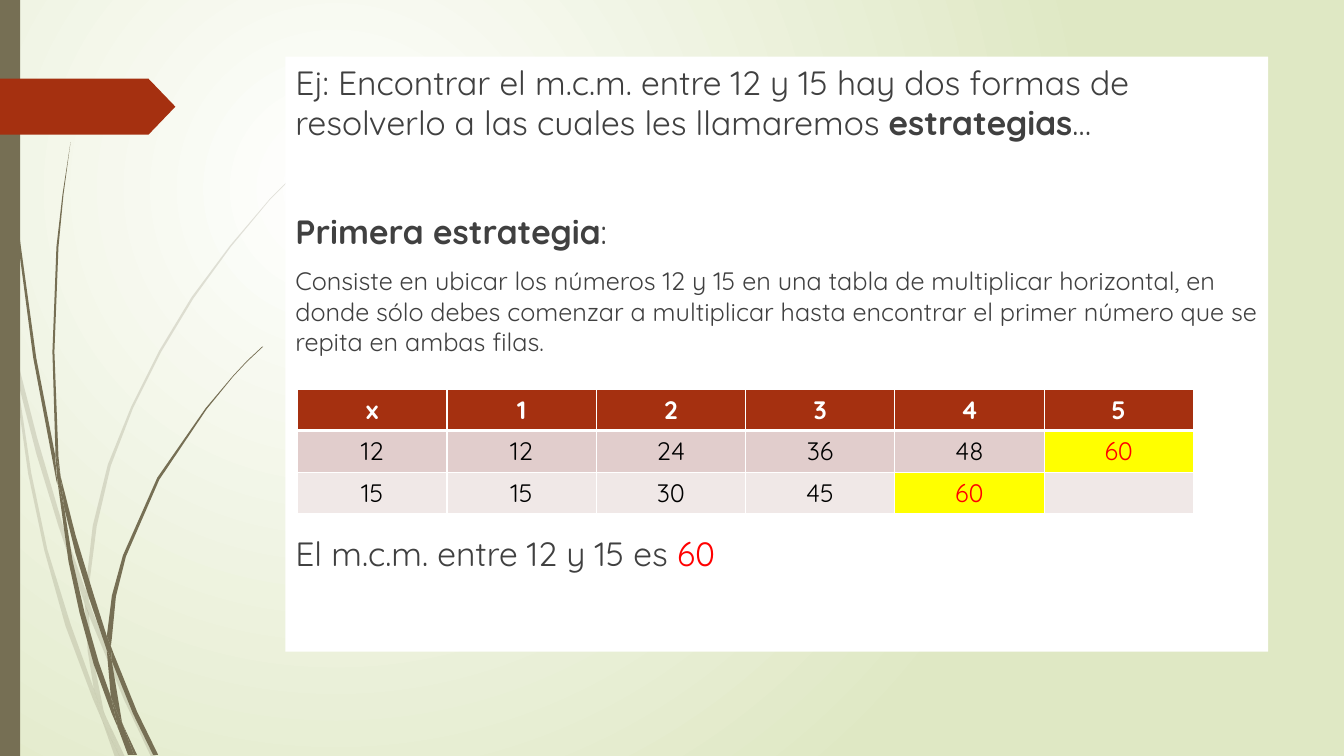
from dataclasses import dataclass

from lxml import etree
from pptx import Presentation
from pptx.dml.color import RGBColor
from pptx.enum import shapes, text
from pptx.oxml import ns
from pptx.util import Pt


@dataclass(frozen=True)
class Theme:
    font: str = "Quicksand"
    large: int = 24
    normal: int = 18
    white: str = "FFFFFF"
    black: str = "000000"
    body: str = "404040"
    olive: str = "766F54"
    rust: str = "A53010"
    meadow: str = "DFE8C4"
    answer: str = "FF0000"
    highlight: str = "FFFF00"
    bands: tuple = ("E1CDCC", "F0E8E7")


THEME = Theme()
WIDTH, HEIGHT = 960, 540

# Outlines of the grass segments, as (x, y) steps on a fine grid.
GRID = Pt(0.72)
FAINT_GRASS = [
    [(11, 350), (9, 322), (0, 282), (0, 299), (10, 344)],
    [(58, 522), (84, 599), (85, 586), (62, 520), (37, 435), (14, 345), (17, 376), (36, 450)],
    [(92, 607), (88, 596), (88, 610), (123, 694), (150, 751), (155, 751), (127, 692)],
    [(119, 751), (124, 751), (105, 711)],
    [(93, 683), (70, 619), (47, 545), (31, 469), (17, 376), (11, 350), (28, 470), (44, 546),
     (65, 621), (92, 693), (101, 714), (99, 707)],
    [(84, 599), (87, 646), (93, 683), (96, 692), (105, 711), (103, 706), (91, 646), (88, 608)],
    [(88, 584), (96, 522), (110, 462), (132, 405), (160, 349), (192, 296), (229, 245),
     (268, 198), (312, 154), (312, 153), (268, 197), (228, 244), (190, 295), (158, 348),
     (130, 404), (107, 461), (92, 522), (85, 584), (85, 586), (88, 596)],
    [(101, 714), (114, 751), (119, 751)],
    [(88, 610), (88, 596), (85, 586), (84, 599)],
    [(96, 692), (93, 683), (99, 707), (101, 714), (119, 751), (105, 711)],
]
DARK_GRASS = [
    [(7, 110), (17, 233), (33, 355), (56, 477), (57, 481), (55, 457), (55, 453), (36, 355),
     (19, 232), (8, 109), (5, 48), (4, 0), (3, 0), (4, 48)],
    [(88, 592), (106, 645), (106, 631), (93, 590), (75, 531), (60, 472), (64, 505), (75, 549)],
    [(113, 649), (110, 641), (111, 656), (132, 708), (152, 749), (157, 749), (136, 706)],
    [(110, 691), (98, 657), (84, 608), (72, 556), (64, 505), (57, 477), (68, 557), (79, 608),
     (93, 659), (111, 708), (117, 722), (116, 717)],
    [(60, 472), (58, 453), (54, 349), (58, 245), (63, 193), (70, 141), (62, 193), (56, 245),
     (52, 349), (55, 449)],
    [(133, 749), (136, 749), (122, 719)],
    [(57, 477), (64, 505), (60, 472), (55, 449), (55, 453)],
    [(111, 633), (115, 592), (125, 552), (158, 476), (205, 406), (231, 374), (245, 359),
     (261, 344), (260, 344), (245, 358), (231, 373), (204, 405), (156, 474), (122, 551),
     (111, 591), (106, 631), (110, 641)],
    [(117, 722), (127, 749), (131, 749)],
    [(106, 645), (110, 691), (116, 706), (122, 719), (121, 716), (111, 656), (109, 651)],
    [(106, 645), (109, 651), (111, 656), (110, 641), (106, 631)],
    [(116, 706), (110, 691), (116, 717), (117, 722), (130, 749), (133, 749), (122, 719)],
]


def color(value):
    return RGBColor.from_string(value)


def add_xml(parent, tag, **attributes):
    return etree.SubElement(parent, ns.qn(tag), attributes)


def paint(shape, fill):
    shape.shadow.inherit = False
    shape.fill.solid()
    shape.fill.fore_color.rgb = color(fill)
    shape.line.fill.background()


def style_run(run, size, ink, bold=False):
    run.font.name = THEME.font
    run.font.size = Pt(size)
    run.font.bold = bold
    run.font.color.rgb = color(ink)


def add_grass(slide, outlines, opacity):
    tuft = slide.shapes.add_group_shape()
    for outline in outlines:
        builder = tuft.shapes.build_freeform(*outline[0], scale=GRID)
        builder.add_line_segments(outline[1:], close=True)
        segment = builder.convert_to_shape()
        paint(segment, THEME.olive)
        if opacity < 100:
            tint = segment._element.spPr.find(ns.qn("a:solidFill"))[0]
            add_xml(tint, "a:alpha", val=str(opacity * 1000))


def add_background(slide):
    fill = slide.background.fill
    fill.gradient()
    for stop, position, value in zip(fill.gradient_stops, (0, 1),
                                     (THEME.white, THEME.meadow)):
        stop.position = position
        stop.color.rgb = color(value)
    gradient = next(slide._element.iter(ns.qn("a:gradFill")))
    gradient.remove(gradient.find(ns.qn("a:lin")))
    circle = add_xml(gradient, "a:path", path="circle")
    add_xml(circle, "a:fillToRect", l="50000", t="50000", r="100000", b="100000")


def add_decoration(slide):
    add_grass(slide, FAINT_GRASS, opacity=20)
    add_grass(slide, DARK_GRASS, opacity=100)
    preset = shapes.MSO_SHAPE
    stripe = slide.shapes.add_shape(preset.RECTANGLE, 0, 0, Pt(14.4), Pt(HEIGHT))
    paint(stripe, THEME.olive)
    arrow = slide.shapes.add_shape(preset.PENTAGON, 0, Pt(56.2), Pt(125.3), Pt(40))
    arrow.adjustments[0] = 0.48
    paint(arrow, THEME.rust)


def fill_body(body, left, top, width, height):
    """Place the white panel; spacing leaves room for the table."""
    body.left, body.top, body.width, body.height = map(Pt, (left, top, width, height))
    paint(body, THEME.white)
    frame = body.text_frame
    frame.word_wrap = True
    frame.auto_size = text.MSO_AUTO_SIZE.NONE
    frame.vertical_anchor = text.MSO_ANCHOR.TOP
    large, normal, ink = THEME.large, THEME.normal, THEME.body
    paragraphs = [
        (0, large, [("Ej: Encontrar el m.c.m. entre 12 y 15 hay dos formas de "
                     "resolverlo a las cuales les llamaremos ", ink, False),
                    ("estrategias", ink, True), ("…", ink, False)]),
        (49.2, large, [("Primera estrategia", ink, True), (":", ink, False)]),
        (10, normal, [("Consiste en ubicar los números 12 y 15 en una tabla de "
                       "multiplicar horizontal, en donde sólo debes comenzar a "
                       "multiplicar hasta encontrar el primer número que se "
                       "repita en ambas filas.", ink, False)]),
        (126, large, [("El m.c.m. entre 12 y 15 es ", ink, False),
                      ("60", THEME.answer, False)]),
    ]
    for index, (space, size, runs) in enumerate(paragraphs):
        paragraph = frame.add_paragraph() if index else frame.paragraphs[0]
        paragraph.space_before = Pt(space)
        paragraph.line_spacing = 1.0
        properties = paragraph._p.get_or_add_pPr()
        properties.set("marL", "0")
        properties.set("indent", "0")
        add_xml(properties, "a:buNone")
        for words, run_ink, bold in runs:
            run = paragraph.add_run()
            run.text = words
            style_run(run, size, run_ink, bold)


def add_borders(cell, bottom):
    properties = cell._tc.get_or_add_tcPr()
    for index, (side, weight) in enumerate(
            (("L", 1), ("R", 1), ("T", 1), ("B", bottom))):
        line = etree.Element(ns.qn("a:ln" + side), w=str(Pt(weight)))
        add_xml(add_xml(line, "a:solidFill"), "a:srgbClr", val=THEME.white)
        properties.insert(index, line)


def add_multiples_table(slide, left, top, width, height):
    rows = [["x", "1", "2", "3", "4", "5"],
            ["12", "12", "24", "36", "48", "60"],
            ["15", "15", "30", "45", "60", ""]]
    table = slide.shapes.add_table(len(rows), len(rows[0]), Pt(left), Pt(top),
                                   Pt(width), Pt(height)).table
    for r, values in enumerate(rows):
        for c, value in enumerate(values):
            cell = table.cell(r, c)
            header = r == 0
            fill = THEME.rust if header else THEME.bands[r - 1]
            ink = THEME.white if header else THEME.black
            if value == "60":
                fill, ink = THEME.highlight, THEME.answer
            cell.fill.solid()
            cell.fill.fore_color.rgb = color(fill)
            add_borders(cell, bottom=3 if header else 1)
            cell.text_frame.text = value
            paragraph = cell.text_frame.paragraphs[0]
            paragraph.alignment = text.PP_ALIGN.CENTER
            for run in paragraph.runs:
                style_run(run, THEME.normal, ink, header)


def build_strategy_slide(presentation):
    slide = presentation.slides.add_slide(presentation.slide_layouts[1])
    title, body = slide.placeholders
    title._element.getparent().remove(title._element)
    add_background(slide)
    add_decoration(slide)
    slide.shapes._spTree.append(body._element)  # in front of the grass
    fill_body(body, 203.8, 40.5, 702, 425)
    add_multiples_table(slide, 212.6, 277.8, 640, 88.5)


def main():
    presentation = Presentation()
    presentation.slide_width, presentation.slide_height = Pt(WIDTH), Pt(HEIGHT)
    build_strategy_slide(presentation)
    presentation.save("out.pptx")


if __name__ == "__main__":
    main()
